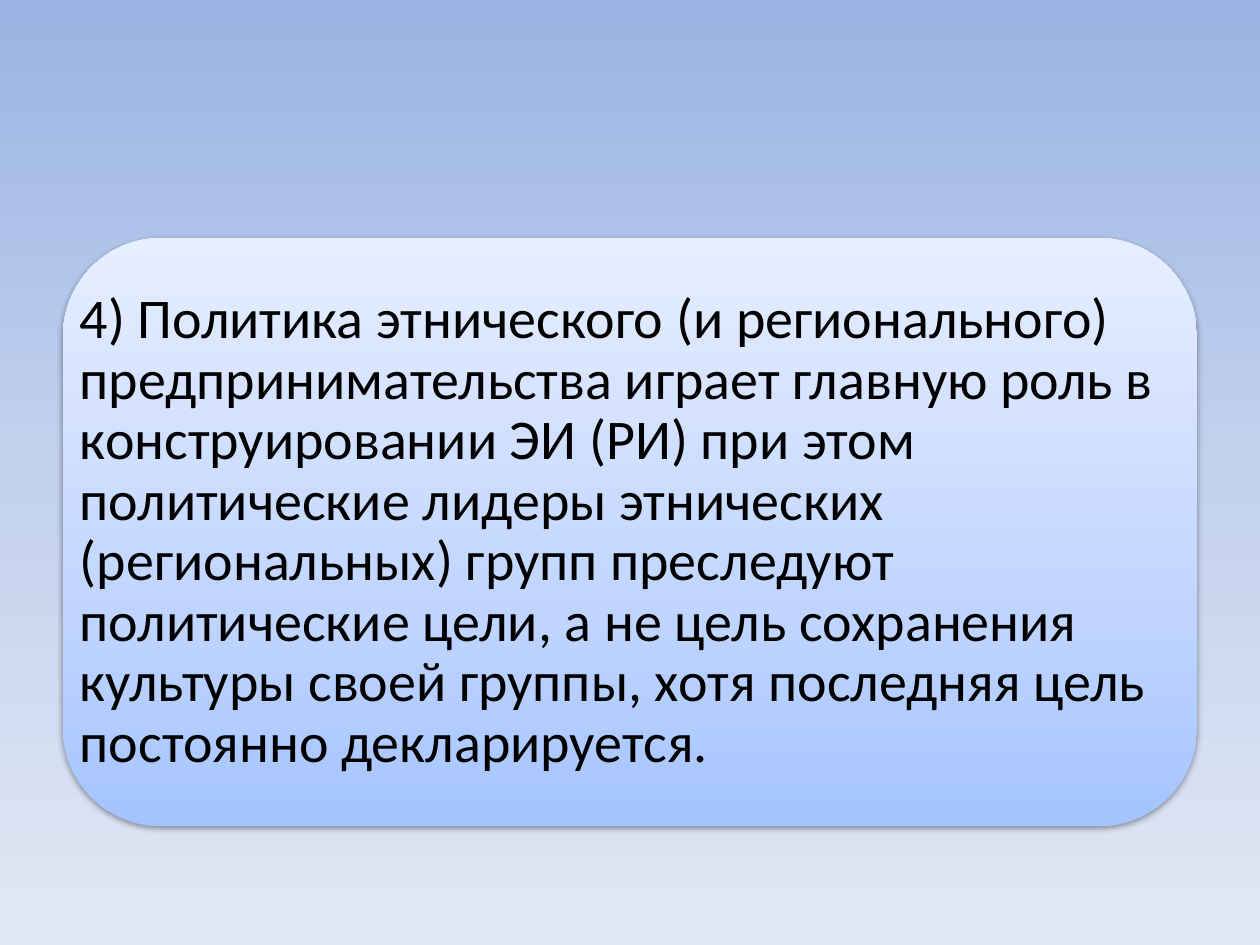
from lxml.etree import SubElement
from pptx import Presentation
from pptx.dml.color import RGBColor
from pptx.enum.shapes import MSO_SHAPE as SHAPE
from pptx.enum.text import MSO_ANCHOR as ANCHOR, PP_ALIGN as ALIGN
from pptx.oxml import parse_xml
from pptx.oxml.ns import nsdecls, qn
from pptx.util import Cm, Pt

COLORS = {
    "sky_top": "9AB5E4", "sky_mid": "C2D1ED", "sky_bottom": "E1E8F5",
    "panel_bottom": "A4C4FF", "panel_mid": "BFD4FF", "panel_top": "E6EEFF",
    "ink": "000000",
}
THESIS = (
    "4) Политика этнического (и регионального) предпринимательства играет "
    "главную роль в конструировании ЭИ (РИ) при этом политические лидеры "
    "этнических (региональных) групп преследуют политические цели, а не цель "
    "сохранения культуры своей группы, хотя последняя цель постоянно "
    "декларируется."
)


def set_gradient(fill, parent, stops, angle):
    fill.solid()
    gs = "".join(
        f'<a:gs pos="{pos * 1000}"><a:srgbClr val="{COLORS[name]}"/></a:gs>'
        for pos, name in stops)
    grad = parse_xml(
        f'<a:gradFill {nsdecls("a")} rotWithShape="1"><a:gsLst>{gs}</a:gsLst>'
        f'<a:lin ang="{angle * 60000}" scaled="0"/></a:gradFill>')
    parent.replace(parent.find(qn("a:solidFill")), grad)


def add_shadow(sp):
    sp.shadow.inherit = False
    effects = sp._element.spPr.find(qn("a:effectLst"))
    shadow = SubElement(effects, qn("a:outerShdw"), blurRad=str(Pt(3.1)),
                        dist=str(Pt(1.6)), dir="5400000", rotWithShape="0")
    color = SubElement(shadow, qn("a:srgbClr"), val=COLORS["ink"])
    SubElement(color, qn("a:alpha"), val="38000")


def paint_background(s):
    fill = s.background.fill
    fill.solid()
    bg_pr = s._element.cSld.find(qn("p:bg")).find(qn("p:bgPr"))
    set_gradient(fill, bg_pr,
                 [(0, "sky_top"), (50, "sky_mid"), (100, "sky_bottom")], 90)


def add_thesis_panel(s, x, y, w, h):
    panel = s.shapes.add_shape(SHAPE.ROUNDED_RECTANGLE, x, y, w, h)
    set_gradient(panel.fill, panel._element.spPr,
                 [(0, "panel_bottom"), (35, "panel_mid"), (100, "panel_top")], 270)
    panel.line.fill.background()
    add_shadow(panel)

    tf = s.shapes.add_textbox(x, y, w, h).text_frame
    tf.word_wrap = True
    tf.vertical_anchor = ANCHOR.MIDDLE
    tf.margin_left = tf.margin_right = tf.margin_top = tf.margin_bottom = Cm(0.34)
    p = tf.paragraphs[0]
    p.alignment = ALIGN.LEFT
    p.line_spacing = 0.9
    r = p.add_run()
    r.text = THESIS
    r.font.size = Pt(32)
    r.font.name = "Calibri"
    r.font.color.rgb = RGBColor.from_string(COLORS["ink"])


def main():
    prs = Presentation()
    prs.slide_width, prs.slide_height = Cm(25.4), Cm(19.05)
    s = prs.slides.add_slide(prs.slide_layouts[6])
    paint_background(s)
    add_thesis_panel(s, Cm(1.27), Cm(4.8), Cm(22.86), Cm(11.86))
    prs.save("out.pptx")


if __name__ == "__main__":
    main()
